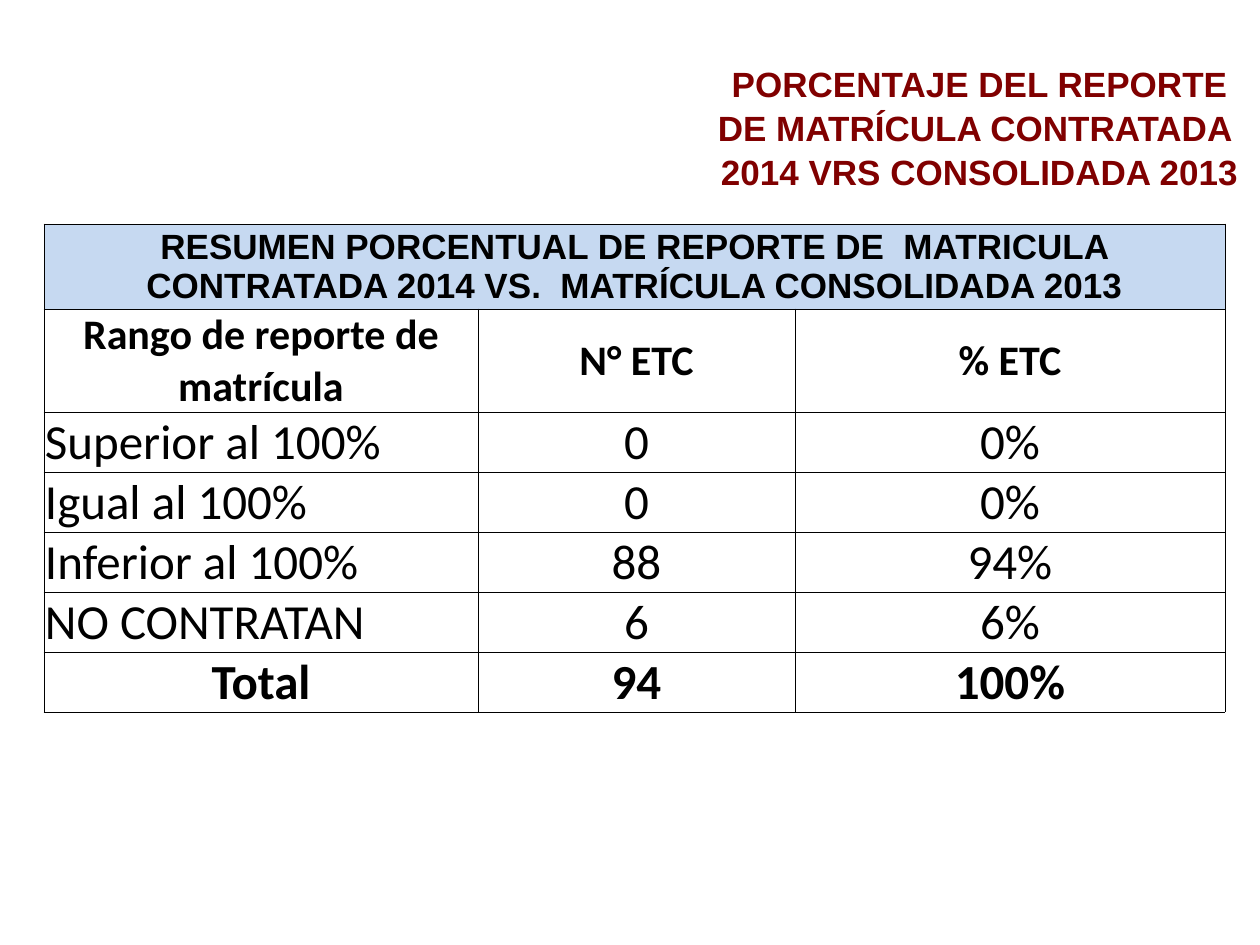
import pptx
import pptx.util
from lxml import etree
from pptx.dml.color import RGBColor
from pptx.enum.text import MSO_ANCHOR, PP_ALIGN
from pptx.oxml.ns import qn

EMU_PER_PX = 914400 / 126
MAROON = RGBColor(0x80, 0x00, 0x00)
BLACK = RGBColor(0x00, 0x00, 0x00)
PALE_BLUE = RGBColor(0xC6, 0xD9, 0xF1)

HEADING = ["PORCENTAJE DEL REPORTE DE MATRÍCULA CONTRATADA ",
           "2014 VRS CONSOLIDADA 2013"]
SUMMARY_TITLE = ("RESUMEN PORCENTUAL DE REPORTE DE  MATRICULA CONTRATADA 2014 "
                 "VS.  MATRÍCULA CONSOLIDADA 2013")
COLUMN_NAMES = ("Rango de reporte de matrícula", "N° ETC", "% ETC")
RANGES = [("Superior al 100%", "0", "0%"),
          ("Igual al 100%", "0", "0%"),
          ("Inferior al 100%", "88", "94%"),
          ("NO CONTRATAN", "6", "6%")]
TOTAL = ("Total", "94", "100%")
COLUMN_WIDTHS = (434, 317, 430)
ROW_HEIGHTS = (85, 103, 60, 60, 60, 60, 60)


def px(length):
    return pptx.util.Emu(round(length * EMU_PER_PX))


def style(paragraph, name, size, color, bold, align=PP_ALIGN.CENTER):
    paragraph.alignment = align
    paragraph.font.name = name
    paragraph.font.size = pptx.util.Pt(size)
    paragraph.font.color.rgb = color
    paragraph.font.bold = bold


def add_heading(slide, left, top, width, height):
    frame = slide.shapes.add_textbox(px(left), px(top), px(width), px(height)).text_frame
    frame.word_wrap = True
    frame.text = "\n".join(HEADING)
    for paragraph in frame.paragraphs:
        style(paragraph, "Arial", 20, MAROON, True)
        paragraph.line_spacing = 1.05


def add_borders(cell):
    """Put thin black lines on all four sides; call before setting the fill."""
    properties = cell._tc.get_or_add_tcPr()
    for side in ("a:lnL", "a:lnR", "a:lnT", "a:lnB"):
        line = etree.SubElement(properties, qn(side), w=str(pptx.util.Pt(0.5)))
        fill = etree.SubElement(line, qn("a:solidFill"))
        etree.SubElement(fill, qn("a:srgbClr"), val=str(BLACK))


def fill_cell(cell, text, name, size, bold, align, anchor):
    cell.margin_left = cell.margin_right = cell.margin_top = px(1)
    cell.margin_bottom = 0
    cell.vertical_anchor = anchor
    cell.text = text
    style(cell.text_frame.paragraphs[0], name, size, BLACK, bold, align)


def add_summary(slide, left, top):
    rows = [(SUMMARY_TITLE, "", ""), COLUMN_NAMES, *RANGES, TOTAL]
    table = slide.shapes.add_table(
        len(rows), len(COLUMN_WIDTHS), px(left), px(top),
        px(sum(COLUMN_WIDTHS)), px(sum(ROW_HEIGHTS))).table
    table.first_row = table.horz_banding = False
    for column, width in zip(table.columns, COLUMN_WIDTHS):
        column.width = px(width)
    for row, height in zip(table.rows, ROW_HEIGHTS):
        row.height = px(height)
    table.cell(0, 0).merge(table.cell(0, len(COLUMN_WIDTHS) - 1))

    for r, values in enumerate(rows):
        is_range = values in RANGES
        name = "Arial" if r == 0 else "Calibri"
        size = {0: 20, 1: 24}.get(r, 28)
        anchor = MSO_ANCHOR.MIDDLE if r < 2 else MSO_ANCHOR.BOTTOM
        for c, value in enumerate(values):
            cell = table.cell(r, c)
            align = PP_ALIGN.LEFT if is_range and c == 0 else PP_ALIGN.CENTER
            add_borders(cell)
            fill_cell(cell, value, name, size, not is_range, align, anchor)
            if r == 0:
                cell.fill.solid()
                cell.fill.fore_color.rgb = PALE_BLUE
            else:
                cell.fill.background()


def main():
    presentation = pptx.Presentation()
    presentation.slide_width, presentation.slide_height = px(1260), px(945)
    slide = presentation.slides.add_slide(presentation.slide_layouts[6])
    add_heading(slide, 699, 54, 561, 140)
    add_summary(slide, 44, 224)
    presentation.save("out.pptx")


if __name__ == "__main__":
    main()
